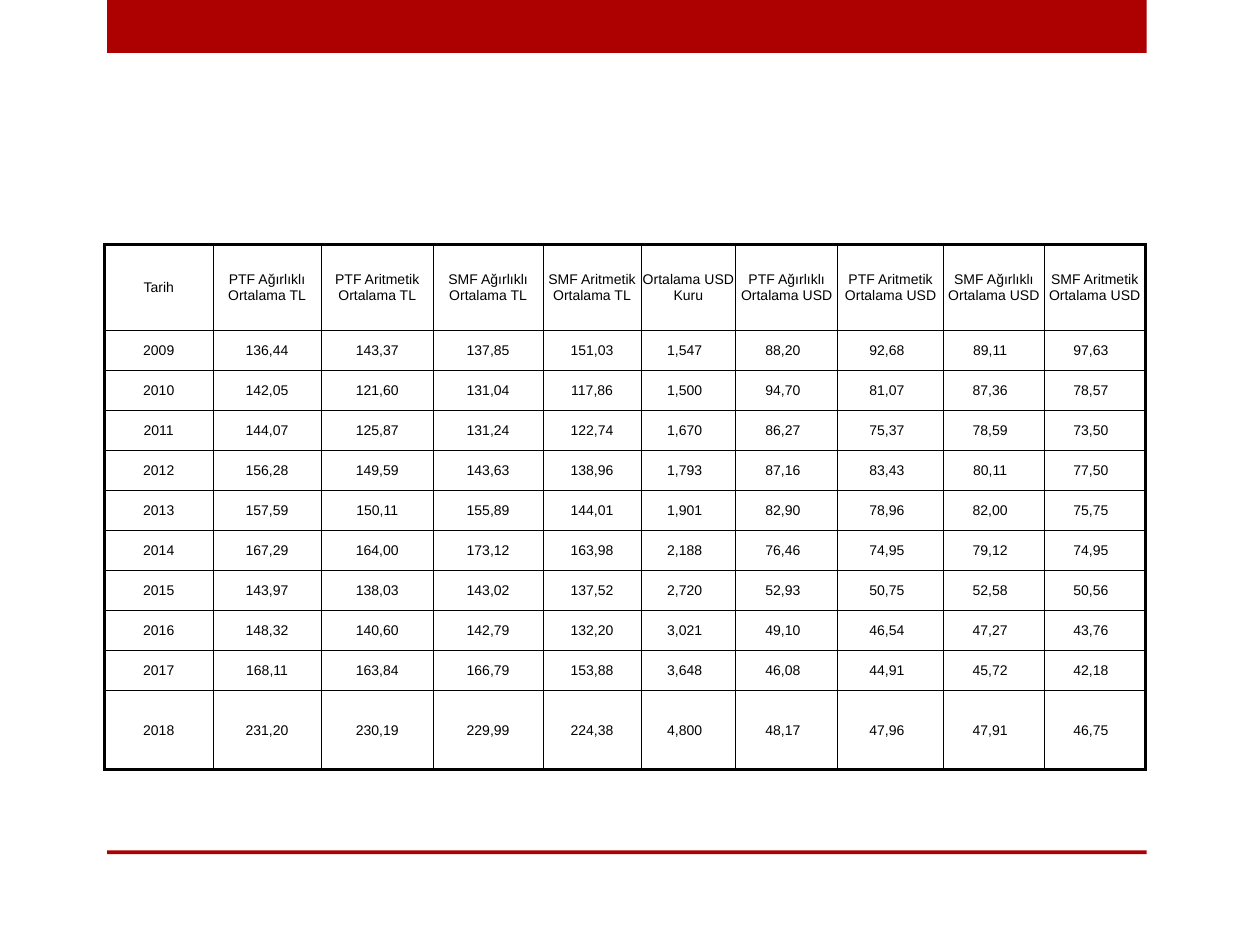
from lxml.etree import SubElement
from pptx import Presentation
from pptx.dml.color import RGBColor
from pptx.enum.shapes import MSO_SHAPE
from pptx.enum.text import MSO_ANCHOR, PP_ALIGN
from pptx.oxml.ns import qn
from pptx.util import Inches, Pt

RED, BLACK = "AD0101", "000000"
COL_WIDTHS = [0.86, 0.86, 0.89, 0.87, 0.78, 0.75, 0.81, 0.84, 0.8, 0.8]
HEADER_HEIGHT, LAST_HEIGHT = 0.68, 0.63
FIRST_USD_COL = 5
HEADERS = [
    "Tarih", "PTF Ağırlıklı Ortalama TL", "PTF Aritmetik Ortalama TL",
    "SMF Ağırlıklı Ortalama TL", "SMF Aritmetik Ortalama TL",
    "Ortalama USD Kuru", "PTF Ağırlıklı Ortalama USD",
    "PTF Aritmetik Ortalama USD", "SMF Ağırlıklı Ortalama USD",
    "SMF Aritmetik Ortalama USD",
]
PRICES = """
2009 136,44 143,37 137,85 151,03 1,547 88,20 92,68 89,11 97,63
2010 142,05 121,60 131,04 117,86 1,500 94,70 81,07 87,36 78,57
2011 144,07 125,87 131,24 122,74 1,670 86,27 75,37 78,59 73,50
2012 156,28 149,59 143,63 138,96 1,793 87,16 83,43 80,11 77,50
2013 157,59 150,11 155,89 144,01 1,901 82,90 78,96 82,00 75,75
2014 167,29 164,00 173,12 163,98 2,188 76,46 74,95 79,12 74,95
2015 143,97 138,03 143,02 137,52 2,720 52,93 50,75 52,58 50,56
2016 148,32 140,60 142,79 132,20 3,021 49,10 46,54 47,27 43,76
2017 168,11 163,84 166,79 153,88 3,648 46,08 44,91 45,72 42,18
2018 231,20 230,19 229,99 224,38 4,800 48,17 47,96 47,91 46,75
"""


def rgb(color):
    """Turn a hex string into a colour."""
    return RGBColor.from_string(color)


def add_bar(slide, left, top, width, height):
    """Draw a plain red bar in the given box."""
    sp = slide.shapes.add_shape(
        MSO_SHAPE.RECTANGLE, Inches(left), Inches(top), Inches(width), Inches(height))
    sp.shadow.inherit = False
    sp.fill.solid()
    sp.fill.fore_color.rgb = rgb(RED)
    sp.line.fill.background()


def set_borders(cell, widths):
    """Give the cell left, right, top and bottom borders of the given point widths."""
    tcPr = cell._tc.get_or_add_tcPr()
    for i, (side, width) in enumerate(zip("LRTB", widths)):
        ln = SubElement(tcPr, qn(f"a:ln{side}"), w=str(Pt(width)))
        fill = SubElement(ln, qn("a:solidFill"))
        SubElement(fill, qn("a:srgbClr"), val=BLACK)
        tcPr.insert(i, ln)


def format_cell(cell, text, right_margin):
    """Write centred text into an unfilled cell."""
    cell.fill.background()
    cell.vertical_anchor = MSO_ANCHOR.MIDDLE
    cell.margin_left = cell.margin_top = Inches(0.01)
    cell.margin_right, cell.margin_bottom = Inches(right_margin), 0
    cell.text = text
    p = cell.text_frame.paragraphs[0]
    p.alignment = PP_ALIGN.CENTER
    p.font.name, p.font.size = "Arial", Pt(8)
    p.font.color.rgb = rgb(BLACK)


def add_price_table(slide, left, top, width, height):
    """Build the yearly price table with a thick outer frame."""
    rows = [HEADERS] + [line.split() for line in PRICES.strip().splitlines()]
    last_row, last_col = len(rows) - 1, len(HEADERS) - 1
    table = slide.shapes.add_table(
        len(rows), len(HEADERS),
        Inches(left), Inches(top), Inches(width), Inches(height)).table
    table.first_row = table.horz_banding = False
    for col, col_width in zip(table.columns, COL_WIDTHS):
        col.width = Inches(col_width)
    middle = (height - HEADER_HEIGHT - LAST_HEIGHT) / (last_row - 1)
    heights = [HEADER_HEIGHT] + [middle] * (last_row - 1) + [LAST_HEIGHT]
    for r, row in enumerate(rows):
        table.rows[r].height = Inches(heights[r])
        for c, text in enumerate(row):
            cell = table.cell(r, c)
            format_cell(cell, text, 0.07 if r and c >= FIRST_USD_COL else 0.01)
            edges = (c == 0, c == last_col, r == 0, r == last_row)
            set_borders(cell, [2 if edge else 0.5 for edge in edges])


def main():
    """Build and save the slide."""
    prs = Presentation()
    prs.slide_width, prs.slide_height = Inches(10), Inches(7.5)
    s = prs.slides.add_slide(prs.slide_layouts[6])
    add_bar(s, 0.85, 0, 8.25, 0.42)
    add_bar(s, 0.85, 6.75, 8.25, 0.03)
    add_price_table(s, 0.83, 1.94, 8.26, 4.17)
    prs.save("out.pptx")


if __name__ == "__main__":
    main()
